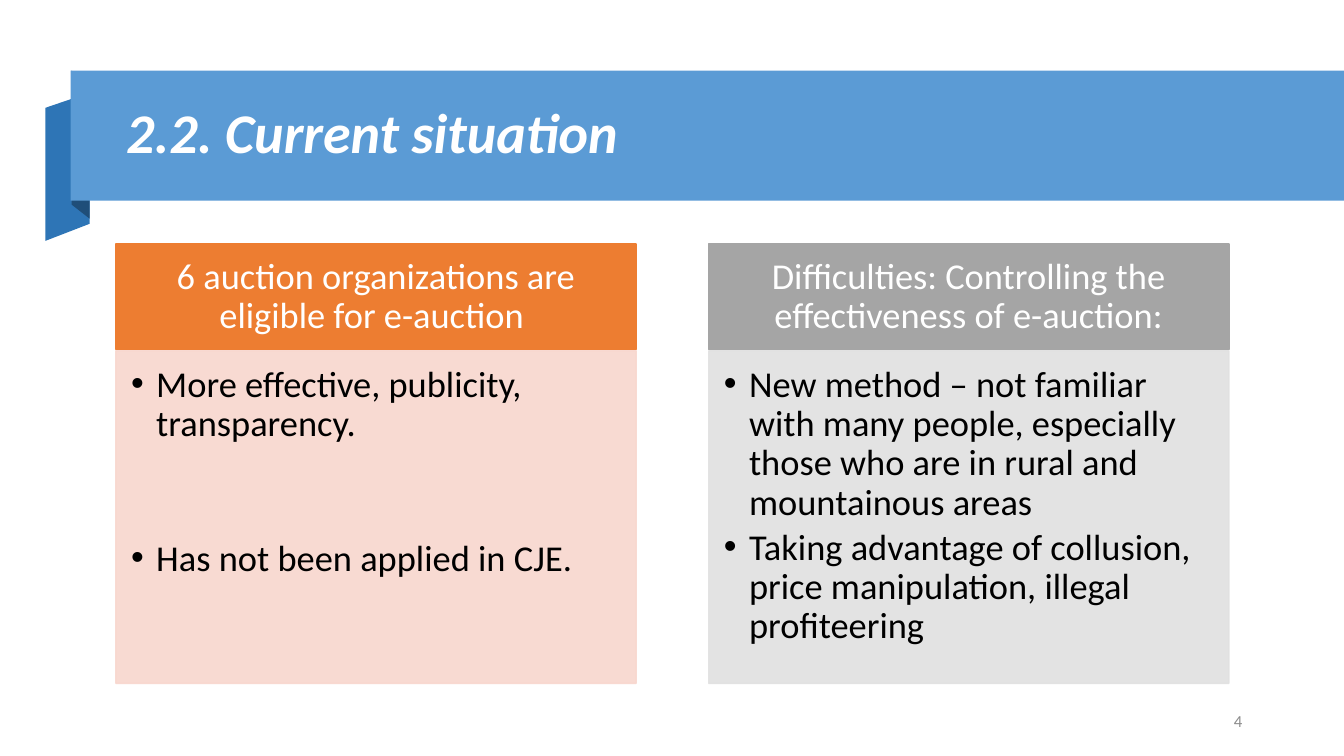
from lxml import etree
from pptx import Presentation
from pptx.dml.color import RGBColor
from pptx.enum.shapes import MSO_SHAPE
from pptx.enum.text import MSO_ANCHOR, PP_ALIGN
from pptx.oxml.ns import qn
from pptx.util import Pt

RECT = MSO_SHAPE.RECTANGLE
TOP, MIDDLE = MSO_ANCHOR.TOP, MSO_ANCHOR.MIDDLE
LEFT, CENTER, RIGHT = PP_ALIGN.LEFT, PP_ALIGN.CENTER, PP_ALIGN.RIGHT
SCALE = 9144


def px(n):
    return n * SCALE


def color(code):
    return RGBColor.from_string(code)


class Deck:
    font = "Calibri"

    def __init__(self, wide, high):
        self.show = Presentation()
        self.show.slide_width, self.show.slide_height = px(wide), px(high)
        self.slide = self.show.slides.add_slide(self.show.slide_layouts[5])
        self.items = self.slide.shapes

    def paint(self, shape, fill, line=None, alpha=None):
        shape.shadow.inherit = False
        shape.fill.solid()
        shape.fill.fore_color.rgb = color(fill)
        if line:
            shape.line.color.rgb = color(line)
            shape.line.width = Pt(1)
        else:
            shape.line.fill.background()
        if alpha:
            for tone in shape._element.spPr.iter(qn("a:srgbClr")):
                etree.SubElement(tone, qn("a:alpha"), val=str(alpha * 1000))
        return shape

    def fold(self, points, fill):
        start, *rest = points
        outline = self.items.build_freeform(*start, scale=SCALE)
        outline.add_line_segments(rest, close=True)
        return self.paint(outline.convert_to_shape(), fill)

    def box(self, area, fill, line=None, alpha=None):
        shape = self.items.add_shape(RECT, *map(px, area))
        return self.paint(shape, fill, line, alpha)

    def frame(self, shape, anchor, inset):
        frame = shape.text_frame
        frame.word_wrap = True
        frame.vertical_anchor = anchor
        (frame.margin_left, frame.margin_top,
         frame.margin_right, frame.margin_bottom) = map(px, inset)
        return frame

    def words(self, para, text, size, tone, align, spacing=0.9, slant=None):
        para.alignment = align
        para.line_spacing = spacing
        run = para.add_run()
        run.text = text
        run.font.name = self.font
        run.font.size = Pt(size)
        run.font.color.rgb = color(tone)
        run.font.bold = run.font.italic = slant

    def title(self, area, text):
        shape = self.items.title
        shape.left, shape.top, shape.width, shape.height = map(px, area)
        frame = self.frame(shape, MIDDLE, (10, 5, 10, 5))
        self.words(frame.paragraphs[0], text, 40, "FFFFFF", LEFT, slant=True)
        self.items._spTree.append(shape._element)

    def head(self, area, text, fill):
        shape = self.box(area, fill, fill)
        frame = self.frame(shape, MIDDLE, (20, 12, 20, 12))
        self.words(frame.paragraphs[0], text, 26, "FFFFFF", CENTER)

    def bullets(self, area, points, fill, gap):
        shape = self.box(area, fill, fill, 90)
        frame = self.frame(shape, TOP, (15, 15, 20, 23))
        for i, text in enumerate(points):
            para = frame.add_paragraph() if i else frame.paragraphs[0]
            self.words(para, text, 26, "000000", LEFT)
            para.space_before = Pt(gap if i else 0)
            para.space_after = Pt(4)
            props = para._p.get_or_add_pPr()
            props.set("marL", str(px(25)))
            props.set("indent", str(px(-25)))
            etree.SubElement(props, qn("a:buFont"), typeface="Arial")
            etree.SubElement(props, qn("a:buChar"), char="•")

    def label(self, area, text):
        shape = self.items.add_textbox(*map(px, area))
        frame = self.frame(shape, MIDDLE, (10, 5, 10, 5))
        self.words(frame.paragraphs[0], text, 12, "8C8C8C", RIGHT, 1.0)


def main():
    deck = Deck(1333, 750)
    deck.fold([(89, 222), (45, 239), (45, 107), (89, 92)], "2E75B6")
    deck.fold([(89, 217), (71, 203), (71, 70), (89, 85)], "1F4E79")
    deck.box((70, 70, 1263, 129), "5B9BD5")
    deck.title((115, 86, 1127, 96), "2.2. Current situation")

    columns = [
        ("6 auction organizations are eligible for e-auction ",
         ["More effective, publicity, transparency.",
          "Has not been applied in CJE."],
         "ED7D31", "F8D7CE", 64),
        ("Difficulties: Controlling the effectiveness of e-auction:",
         ["New method – not familiar with many people, especially "
          "those who are in rural and mountainous areas",
          "Taking advantage of collusion, price manipulation, "
          "illegal profiteering"],
         "A5A5A5", "E1E1E1", 0),
    ]
    for i, (head, points, dark, light, gap) in enumerate(columns):
        left = 115 + 588 * i
        deck.head((left, 242, 516, 105), head, dark)
        deck.bullets((left, 348, 516, 330), points, light, gap)

    deck.label((942, 695, 300, 40), "4")
    deck.show.save("out.pptx")


if __name__ == "__main__":
    main()
